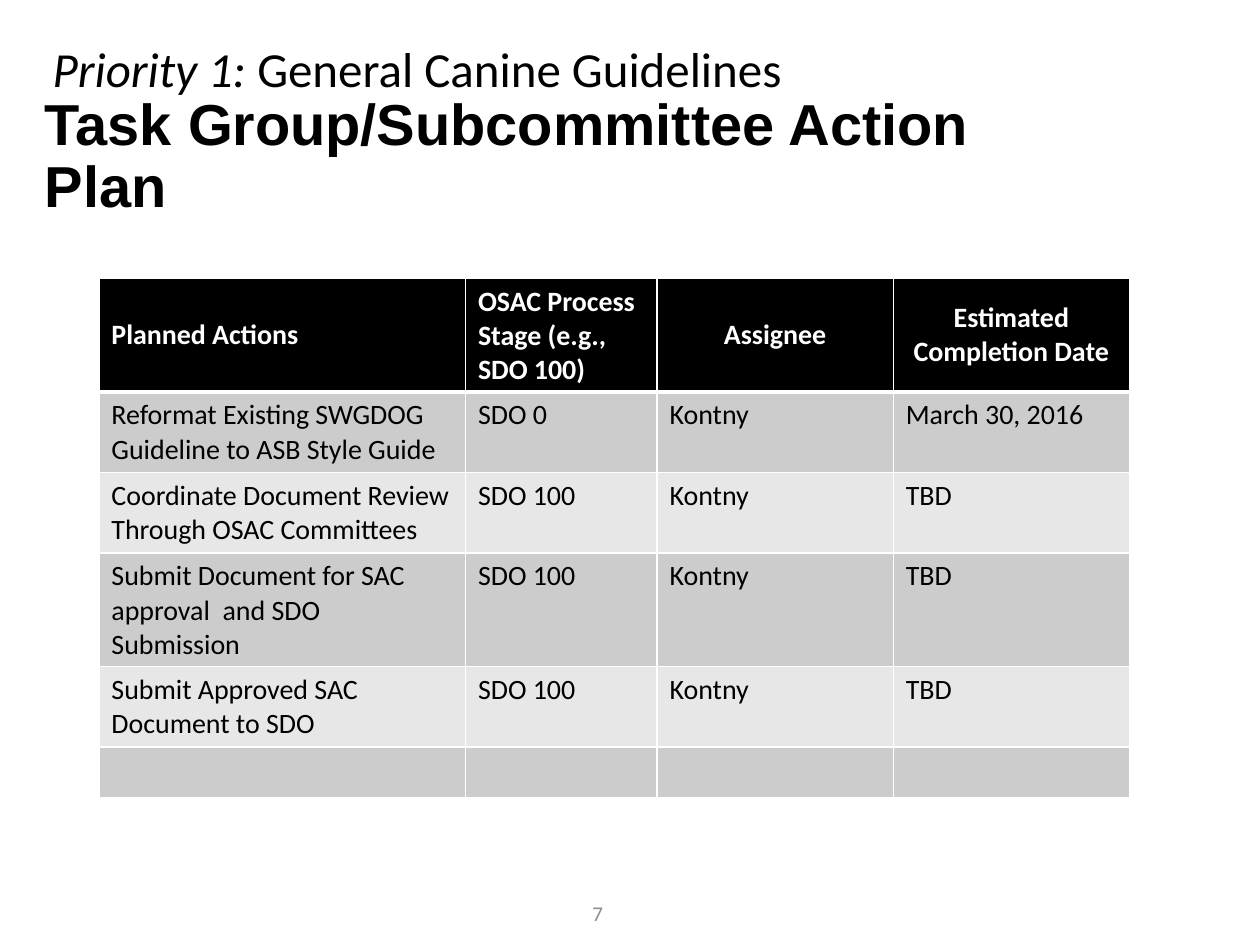
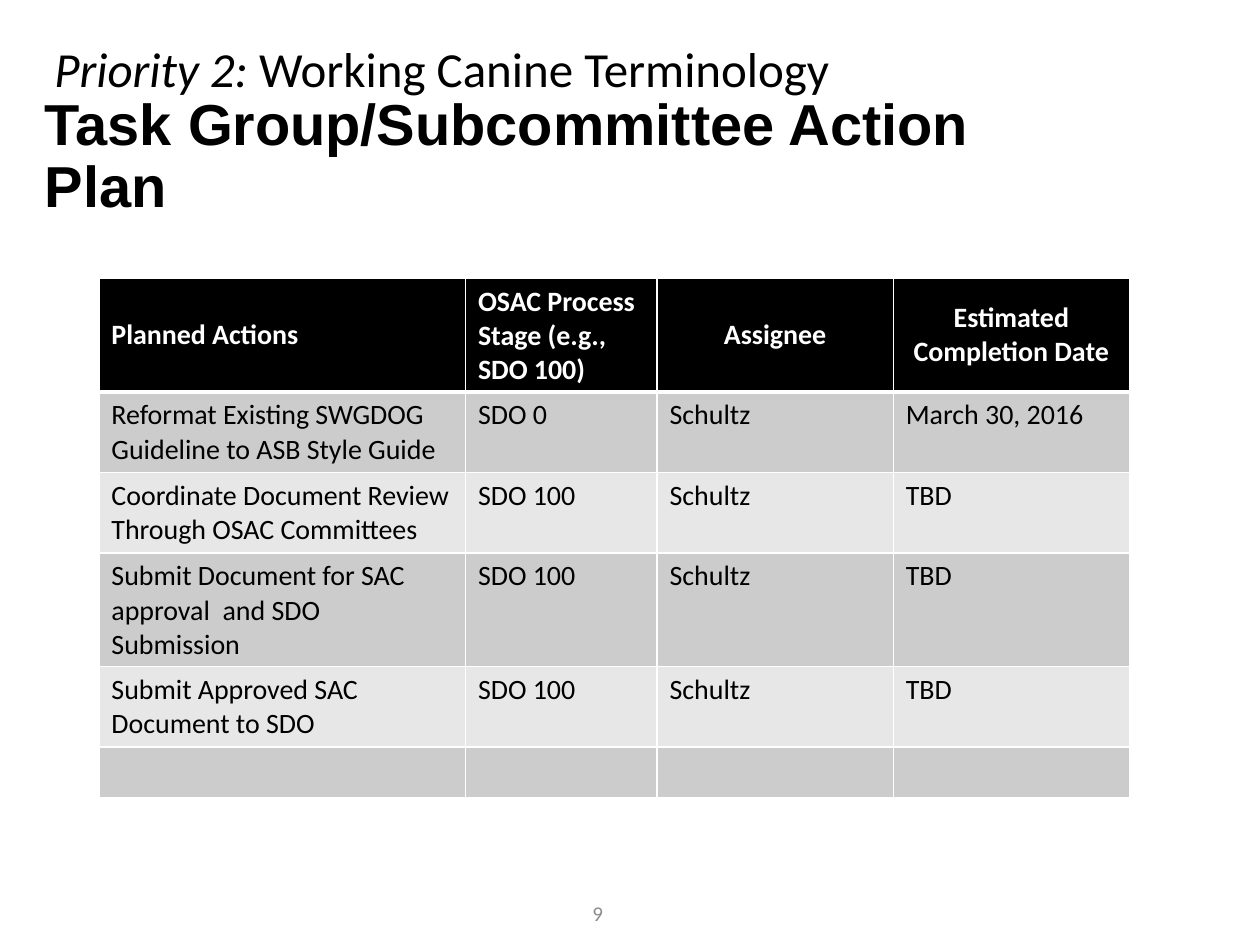
from dataclasses import dataclass

from lxml import etree
from pptx import Presentation
from pptx.dml.color import RGBColor
from pptx.enum.text import MSO_ANCHOR, PP_ALIGN
from pptx.oxml.ns import qn
from pptx.util import Pt

LEFT, CENTER = PP_ALIGN.LEFT, PP_ALIGN.CENTER
TOP, MIDDLE = MSO_ANCHOR.TOP, MSO_ANCHOR.MIDDLE
BLANK_LAYOUT = 6


@dataclass(frozen=True)
class Theme:
    ink: str = "000000"
    paper: str = "FFFFFF"
    muted: str = "8C8C8C"
    bands: tuple = ("CCCCCC", "E7E7E7")
    title_font: str = "Arial"
    body_font: str = "Calibri"
    title_size: float = 33
    priority_size: float = 28
    table_size: float = 16
    number_size: float = 12
    thin_border: float = 1
    thick_border: float = 3


THEME = Theme()

TITLE = "Task Group/Subcommittee Action Plan"
TITLE_BOX = (18.5, 38, 620.5, 104.5)
TABLE_BOX = (56.5, 159, 589, 297)
NUMBER_BOX = (260.5, 507.5, 162, 29)

COLUMN_WIDTHS = (209.5, 109.5, 135, 135)
ROW_HEIGHTS = (65, 46, 46, 65, 46, 29)
HEADINGS = (
    ("Planned Actions", LEFT),
    ("OSAC Process Stage (e.g., SDO 100)", LEFT),
    ("Assignee", CENTER),
    ("Estimated Completion Date", CENTER),
)
ACTIONS = (
    ("Reformat Existing SWGDOG Guideline to ASB Style Guide", "SDO 0", "March 30, 2016"),
    ("Coordinate Document Review Through OSAC Committees", "SDO 100", "TBD"),
    ("Submit Document for SAC approval  and SDO Submission", "SDO 100", "TBD"),
    ("Submit Approved SAC Document to SDO", "SDO 100", "TBD"),
)
PLANS = (
    dict(priority="Priority 1: ", topic="General Canine Guidelines", assignee="Kontny",
         number="7", priority_box=(23, 18.5, 551, 41)),
    dict(priority="Priority 2: ", topic="Working Canine Terminology", assignee="Schultz",
         number="9", priority_box=(24, 18.5, 559, 41)),
)


def add_run(paragraph, text, *, size, font=THEME.body_font, color=THEME.ink,
            bold=False, italic=False):
    run = paragraph.add_run()
    run.text = text
    run.font.name = font
    run.font.size = Pt(size)
    run.font.bold = bold
    run.font.italic = italic
    run.font.color.rgb = RGBColor.from_string(color)


def add_text_box(slide, box, *, anchor=TOP, align=LEFT):
    frame = slide.shapes.add_textbox(*map(Pt, box)).text_frame
    frame.word_wrap = True
    frame.vertical_anchor = anchor
    paragraph = frame.paragraphs[0]
    paragraph.alignment = align
    return paragraph


def add_title(slide, box):
    paragraph = add_text_box(slide, box, anchor=MIDDLE)
    paragraph.line_spacing = 0.9
    add_run(paragraph, TITLE, size=THEME.title_size, font=THEME.title_font, bold=True)


def add_priority(slide, box, priority, topic):
    paragraph = add_text_box(slide, box)
    add_run(paragraph, priority, size=THEME.priority_size, italic=True)
    add_run(paragraph, topic, size=THEME.priority_size)


def add_slide_number(slide, box, number):
    paragraph = add_text_box(slide, box, anchor=MIDDLE, align=CENTER)
    add_run(paragraph, number, size=THEME.number_size, color=THEME.muted)


def set_borders(cell, **widths):
    properties = cell._tc.get_or_add_tcPr()
    for position, side in enumerate(("lnL", "lnR", "lnT", "lnB")):
        width = widths.get(side, THEME.thin_border)
        line = etree.Element(qn(f"a:{side}"), w=str(Pt(width)))
        fill = etree.SubElement(line, qn("a:solidFill"))
        etree.SubElement(fill, qn("a:srgbClr"), val=THEME.paper)
        properties.insert(position, line)


def fill_cell(cell, text, *, fill, align=LEFT, anchor=TOP, **text_format):
    cell.fill.solid()
    cell.fill.fore_color.rgb = RGBColor.from_string(fill)
    cell.vertical_anchor = anchor
    paragraph = cell.text_frame.paragraphs[0]
    paragraph.alignment = align
    if text:
        add_run(paragraph, text, size=THEME.table_size, **text_format)
    else:
        paragraph.font.size = Pt(THEME.table_size)


def add_action_table(slide, box, assignee):
    table = slide.shapes.add_table(len(ROW_HEIGHTS), len(COLUMN_WIDTHS), *map(Pt, box)).table
    table.horz_banding = False
    for column, width in zip(table.columns, COLUMN_WIDTHS):
        column.width = Pt(width)
    for row, height in zip(table.rows, ROW_HEIGHTS):
        row.height = Pt(height)
    for column, (heading, align) in enumerate(HEADINGS):
        cell = table.cell(0, column)
        fill_cell(cell, heading, fill=THEME.ink, align=align, anchor=MIDDLE,
                  color=THEME.paper, bold=True)
        set_borders(cell, lnB=THEME.thick_border)
    body = [(action, stage, assignee, date) for action, stage, date in ACTIONS]
    body.append(("",) * len(HEADINGS))
    for row, values in enumerate(body, start=1):
        top_border = THEME.thick_border if row == 1 else THEME.thin_border
        for column, value in enumerate(values):
            cell = table.cell(row, column)
            fill_cell(cell, value, fill=THEME.bands[(row - 1) % 2])
            set_borders(cell, lnT=top_border)


def add_plan_slide(presentation, *, priority, topic, assignee, number, priority_box):
    slide = presentation.slides.add_slide(presentation.slide_layouts[BLANK_LAYOUT])
    add_title(slide, TITLE_BOX)
    add_action_table(slide, TABLE_BOX, assignee)
    add_priority(slide, priority_box, priority, topic)
    add_slide_number(slide, NUMBER_BOX, number)


def main():
    presentation = Presentation()
    presentation.slide_width = Pt(720)
    presentation.slide_height = Pt(540)
    for plan in PLANS:
        add_plan_slide(presentation, **plan)
    presentation.save("out.pptx")


if __name__ == "__main__":
    main()
